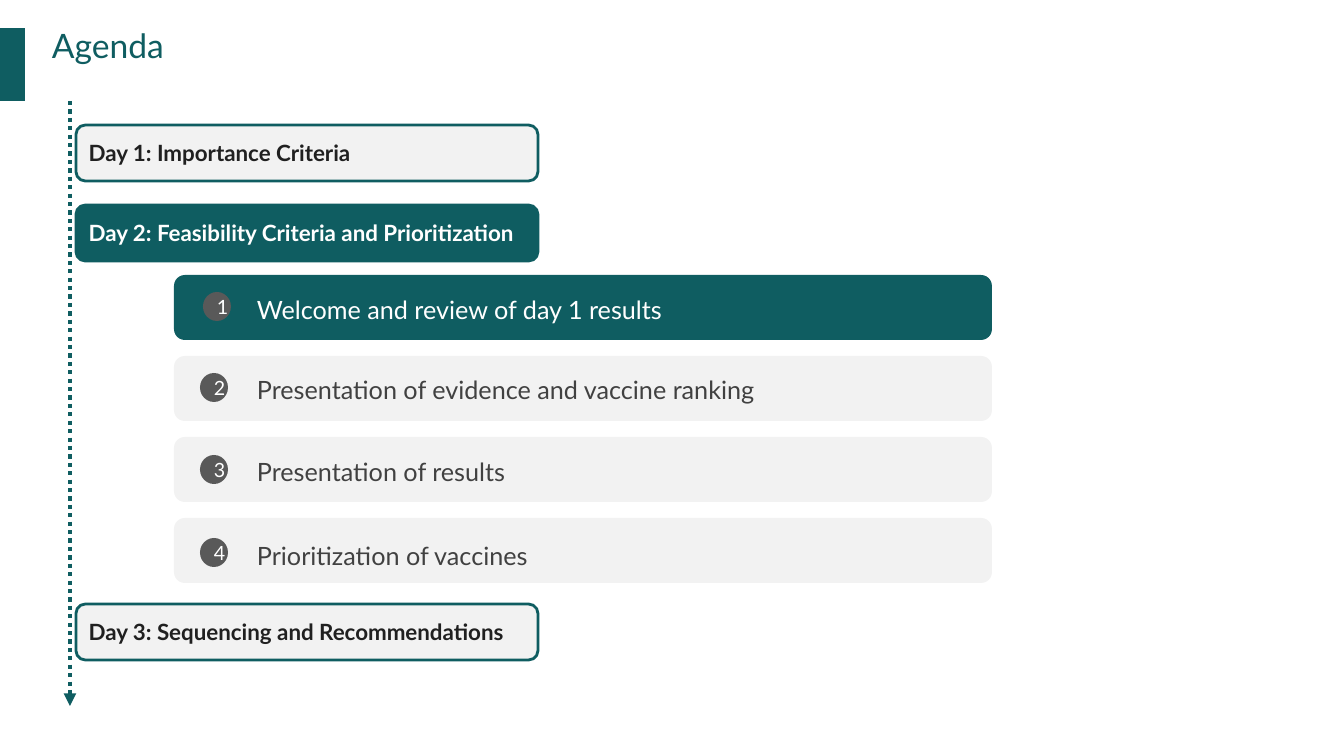
from pptx import Presentation
from pptx.dml.color import RGBColor
from pptx.enum.dml import MSO_LINE
from pptx.enum.shapes import MSO_CONNECTOR, MSO_SHAPE
from pptx.enum.text import MSO_ANCHOR, PP_ALIGN
from pptx.oxml.ns import qn
from pptx.util import Pt
from lxml.etree import SubElement

TEAL, PALE, GREY = "0F5D61", "F2F2F2", "595959"
WHITE, BLACK, DARK = "FFFFFF", "202020", "414141"
FONT = "Lato"

# label, top, active
DAYS = [
    ("Day 1: Importance Criteria", 125, False),
    ("Day 2: Feasibility Criteria and Prioritization", 205, True),
    ("Day 3: Sequencing and Recommendations", 604, False),
]
# label, active, badge left, badge drop, text drop
TOPICS = [
    ("Welcome and review of day 1 results", True, 203, 17, 14),
    ("Presentation of evidence and vaccine ranking", False, 200, 17, 13),
    ("Presentation of results", False, 200, 18, 14),
    ("Prioritization of vaccines", False, 200, 20, 17),
]
TOP, STEP = 275, 81


def px(n):
    return round(n * 914400 / 100.8)


def color(code):
    return RGBColor.from_string(code)


def write(shape, text, size, ink, bold=False, align=PP_ALIGN.LEFT,
          anchor=MSO_ANCHOR.TOP):
    frame = shape.text_frame
    frame.word_wrap = True
    frame.vertical_anchor = anchor
    para = frame.paragraphs[0]
    para.alignment = align
    run = para.add_run()
    run.text = text
    font = run.font
    font.name, font.size, font.bold = FONT, Pt(size), bold
    font.color.rgb = color(ink)
    return frame


def block(shapes, kind, box, fill, edge=None):
    shape = shapes.add_shape(kind, *map(px, box))
    shape.shadow.inherit = False
    shape.fill.solid()
    shape.fill.fore_color.rgb = color(fill)
    if edge:
        shape.line.color.rgb = color(edge)
        shape.line.width = Pt(2)
    else:
        shape.line.fill.background()
    return shape


def label(shapes, box, text, **style):
    return write(shapes.add_textbox(*map(px, box)), text, **style)


def timeline(shapes, x, top, end):
    line = shapes.add_connector(
        MSO_CONNECTOR.STRAIGHT, px(x), px(top), px(x), px(end))
    line.line.color.rgb = color(TEAL)
    line.line.width = Pt(3)
    line.line.dash_style = MSO_LINE.ROUND_DOT
    props = line._element.spPr
    SubElement(props.find(qn("a:ln")), qn("a:tailEnd"), type="triangle")
    SubElement(props, qn("a:effectLst"))


def main():
    deck = Presentation()
    deck.slide_width, deck.slide_height = px(1344), px(756)
    shapes = deck.slides.add_slide(deck.slide_layouts[6]).shapes

    block(shapes, MSO_SHAPE.RECTANGLE, (-1, 28, 26, 73), TEAL)
    title = label(shapes, (52, 25, 1265, 81), "Agenda", size=24, ink=TEAL)
    title.margin_left = title.margin_right = 0
    title.margin_top = title.margin_bottom = 0
    timeline(shapes, 70, 101, 706)

    for text, top, active in DAYS:
        day = block(shapes, MSO_SHAPE.ROUNDED_RECTANGLE, (76, top, 462, 56),
                    TEAL if active else PALE, TEAL)
        write(day, text, 16, WHITE if active else BLACK, bold=True,
              anchor=MSO_ANCHOR.MIDDLE)

    for i, (text, active, left, drop, sink) in enumerate(TOPICS):
        top = TOP + i * STEP
        group = shapes.add_group_shape().shapes
        block(group, MSO_SHAPE.ROUNDED_RECTANGLE, (174, top, 818, 65),
              TEAL if active else PALE)
        badge = block(group, MSO_SHAPE.OVAL, (left, top + drop, 28, 29), GREY)
        write(badge, str(i + 1), 14, WHITE, align=PP_ALIGN.CENTER,
              anchor=MSO_ANCHOR.MIDDLE)
        label(group, (247, top + sink, 725 if active else 699, 40), text,
              size=18, ink=WHITE if active else DARK)

    deck.save("out.pptx")


if __name__ == "__main__":
    main()
